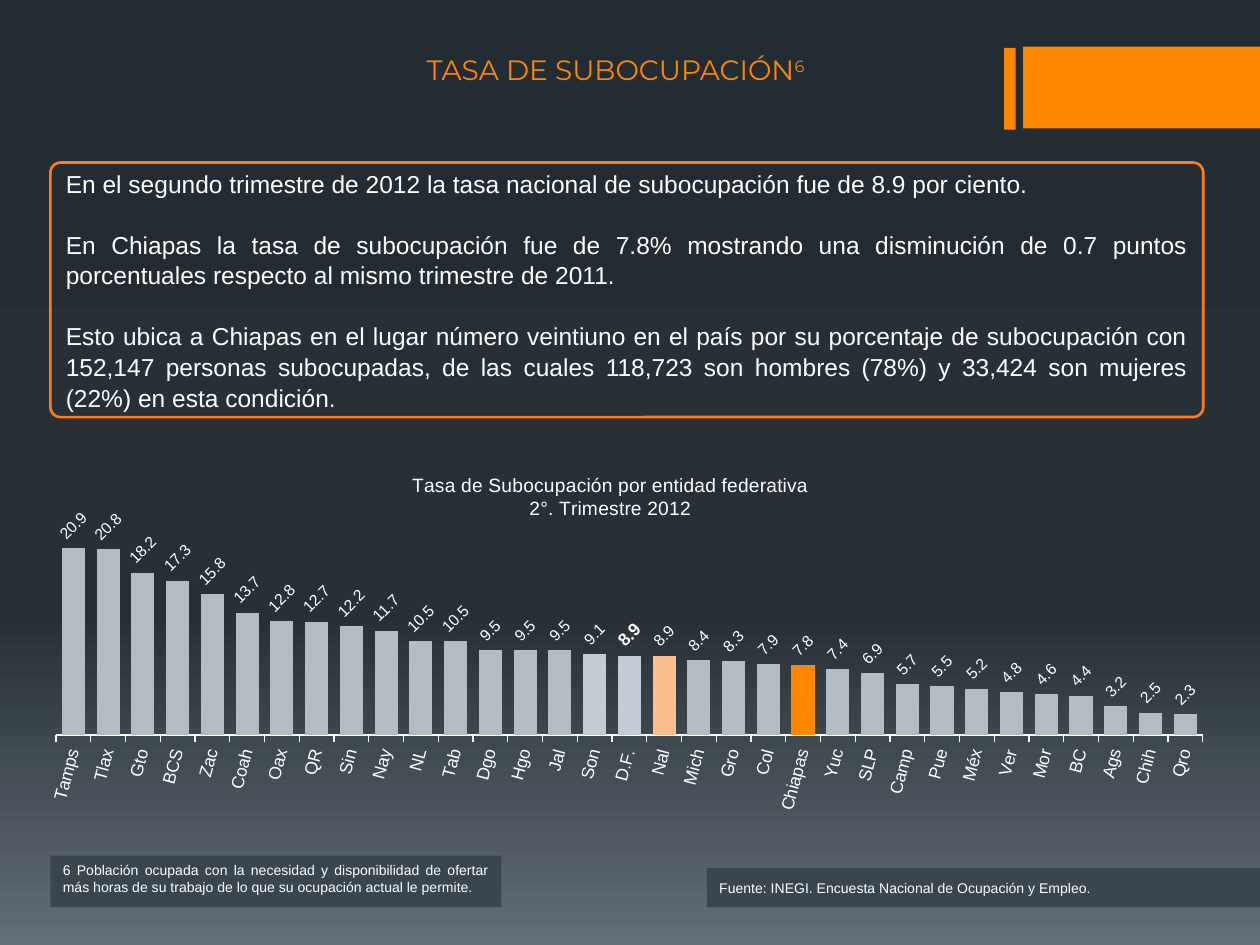
"""Build the slide on the underemployment rate by Mexican state."""
from copy import deepcopy
from dataclasses import dataclass

from lxml import etree
from pptx import Presentation
from pptx.chart.data import CategoryChartData
from pptx.dml.color import RGBColor
from pptx.enum.chart import XL_CHART_TYPE, XL_LABEL_POSITION, XL_TICK_MARK
from pptx.enum.shapes import MSO_SHAPE
from pptx.enum.text import MSO_ANCHOR, PP_ALIGN
from pptx.oxml.ns import qn
from pptx.util import Inches, Pt

COLUMNS = XL_CHART_TYPE.COLUMN_CLUSTERED
OUTSIDE_END = XL_LABEL_POSITION.OUTSIDE_END
TICK_OUTSIDE = XL_TICK_MARK.OUTSIDE
RECTANGLE, ROUNDED = MSO_SHAPE.RECTANGLE, MSO_SHAPE.ROUNDED_RECTANGLE
TOP, MIDDLE = MSO_ANCHOR.TOP, MSO_ANCHOR.MIDDLE
CENTER, JUSTIFY = PP_ALIGN.CENTER, PP_ALIGN.JUSTIFY


@dataclass(frozen=True)
class Theme:
    orange: RGBColor = RGBColor(0xFF, 0x86, 0x00)
    outline: RGBColor = RGBColor(0xFF, 0x7C, 0x19)
    peach: RGBColor = RGBColor(0xF9, 0xBE, 0x92)
    bar: RGBColor = RGBColor(0xB5, 0xBB, 0xC3)
    pale_bar: RGBColor = RGBColor(0xC3, 0xCC, 0xD4)
    panel: RGBColor = RGBColor(0x39, 0x46, 0x50)
    white: RGBColor = RGBColor(0xFF, 0xFF, 0xFF)
    backdrop: tuple = ((0, "242C33"), (0.65, "273037"), (1, "636D76"))
    heading_font: str = "Montserrat"
    body_font: str = "Arial"
    heading: Pt = Pt(16)
    body: Pt = Pt(14)
    chart_title: Pt = Pt(11)
    axis: Pt = Pt(10)
    label: Pt = Pt(9)
    note: Pt = Pt(8)


theme = Theme()
deck = Presentation()
deck.slide_width, deck.slide_height = Inches(10), Inches(7.5)
page = deck.slides.add_slide(deck.slide_layouts[5])


def add_panel(kind, left, top, width, height, fill=None, texts=(), size=None, anchor=MIDDLE):
    box = page.shapes.add_shape(kind, Inches(left), Inches(top), Inches(width), Inches(height))
    box.shadow.inherit = False
    box.line.fill.background()
    if fill is None:
        box.fill.background()
    else:
        box.fill.solid()
        box.fill.fore_color.rgb = fill
    frame = box.text_frame
    frame.word_wrap = True
    frame.vertical_anchor = anchor
    for index, text in enumerate(texts):
        para = frame.paragraphs[0] if index == 0 else frame.add_paragraph()
        para.text = text
        para.alignment = JUSTIFY
        para.font.size = size
        para.font.name = theme.body_font
        para.font.color.rgb = theme.white
    return box


def set_layout(parent, position, values):
    for old in parent.findall(qn("c:layout")):
        parent.remove(old)
    layout = etree.Element(qn("c:layout"))
    manual = etree.SubElement(layout, qn("c:manualLayout"))
    for name, value in values.items():
        etree.SubElement(manual, qn(f"c:{name}")).set("val", str(value))
    parent.insert(position, layout)


backdrop = page.background.fill
backdrop.gradient()
backdrop.gradient_angle = 270
stop_list = page.background._cSld.find(".//" + qn("a:gsLst"))
stop_list.append(deepcopy(stop_list[0]))
for stop, (position, color) in zip(backdrop.gradient_stops, theme.backdrop):
    stop.position = position
    stop.color.rgb = RGBColor.from_string(color)

add_panel(RECTANGLE, 7.97, 0.38, 0.09, 0.65, theme.orange)
add_panel(RECTANGLE, 8.12, 0.37, 1.88, 0.65, theme.orange)

title = page.shapes.title
title.left, title.top, title.width, title.height = map(Inches, (1.84, 0.37, 6.09, 0.37))
title.text_frame.vertical_anchor = TOP
heading = title.text_frame.paragraphs[0]
heading.alignment = CENTER
heading.add_run().text = "TASA DE SUBOCUPACIÓN"
marker = heading.add_run()
marker.text = "6"
marker._r.get_or_add_rPr().set("baseline", "30000")
heading.font.size = theme.heading
heading.font.name = theme.heading_font
heading.font.color.rgb = theme.orange

summary = add_panel(ROUNDED, 0.4, 1.29, 9.15, 2.02, size=theme.body, texts=(
    "En el segundo trimestre de 2012 la tasa nacional de subocupación fue de 8.9 por ciento.",
    "En Chiapas la tasa de subocupación fue de 7.8% mostrando una disminución de 0.7 puntos "
    "porcentuales respecto al mismo trimestre de 2011.",
    "Esto ubica a Chiapas en el lugar número veintiuno en el país por su porcentaje de "
    "subocupación con 152,147 personas subocupadas, de las cuales 118,723 son hombres (78%) "
    "y 33,424 son mujeres (22%) en esta condición."))
summary.adjustments[0] = 0.04
summary.line.color.rgb = theme.outline
summary.line.width = Pt(1.5)
for index, para in enumerate(summary.text_frame.paragraphs):
    para.line_spacing = 1.05
    para.space_before = Pt(17 if index else 0)

add_panel(RECTANGLE, 5.61, 6.89, 4.39, 0.31, theme.panel,
          ["Fuente: INEGI. Encuesta Nacional de Ocupación y Empleo."], theme.note)
add_panel(RECTANGLE, 0.4, 6.79, 3.58, 0.41, theme.panel,
          ["6 Población ocupada con la necesidad y disponibilidad de ofertar más horas de su "
           "trabajo de lo que su ocupación actual le permite."], theme.note, TOP)

rates = CategoryChartData(number_format="0.0")
rates.categories = (
    "Tamps Tlax Gto BCS Zac Coah Oax QR Sin Nay NL Tab Dgo Hgo Jal Son D.F. Nal Mich Gro Col "
    "Chiapas Yuc SLP Camp Pue Méx Ver Mor BC Ags Chih Qro").split()
rates.add_series("Series 1", (
    20.9, 20.8, 18.2, 17.3, 15.8, 13.7, 12.8, 12.7, 12.2, 11.7, 10.5, 10.5, 9.5, 9.5, 9.5, 9.1, 8.9,
    8.9, 8.4, 8.3, 7.9, 7.8, 7.4, 6.9, 5.7, 5.5, 5.2, 4.8, 4.6, 4.4, 3.2, 2.5, 2.3))
chart = page.shapes.add_chart(
    COLUMNS, Inches(0.4), Inches(3.5), Inches(9.15), Inches(3.08), rates).chart
chart.has_legend = False
chart.font.name = theme.body_font
chart.font.size = theme.axis
chart.font.color.rgb = theme.white

caption = chart.chart_title.text_frame
caption.text = "Tasa de Subocupación por entidad federativa\n2°. Trimestre 2012"
for para in caption.paragraphs:
    para.font.size = theme.chart_title
    para.font.name = theme.body_font
    para.font.bold = False
    para.font.color.rgb = theme.white

states = chart.category_axis
states.major_tick_mark = TICK_OUTSIDE
states.has_major_gridlines = False
states.format.line.color.rgb = theme.white
states.tick_labels.font.size = theme.axis
scale = chart.value_axis
scale.minimum_scale, scale.maximum_scale = 0, 25
scale.has_major_gridlines = False
scale.visible = False

plot = chart.plots[0]
plot.gap_width = 50
plot.vary_by_categories = False
series = plot.series[0]
series.format.fill.solid()
series.format.fill.fore_color.rgb = theme.bar
for index, color in {15: theme.pale_bar, 16: theme.pale_bar,
                     17: theme.peach, 21: theme.orange}.items():
    fill = series.points[index].format.fill
    fill.solid()
    fill.fore_color.rgb = color

labels = series.data_labels
labels.show_value = True
labels.number_format = "0.0"
labels.number_format_is_linked = False
labels.position = OUTSIDE_END
labels.font.size = theme.label
labels.font.color.rgb = theme.white
capital = series.points[16].data_label
capital.font.bold = True
capital.font.size = theme.axis
capital.font.color.rgb = theme.white
capital.position = OUTSIDE_END

rotations = {qn("c:catAx"): -75, qn("c:dLbls"): -45, qn("c:dLbl"): -45}
for text_style in chart._chartSpace.iter(qn("c:txPr")):
    degrees = rotations.get(text_style.getparent().tag)
    if degrees:
        text_style.find(qn("a:bodyPr")).set("rot", str(degrees * 60000))

edges = {"xMode": "edge", "yMode": "edge"}
set_layout(chart._chartSpace.chart.plotArea, 0, {
    "layoutTarget": "inner", **edges, "x": 0.004, "y": 0.183, "w": 0.996, "h": 0.575})
set_layout(chart.chart_title._element, 1, {**edges, "x": 0.31, "y": 0.07})

deck.save("out.pptx")
